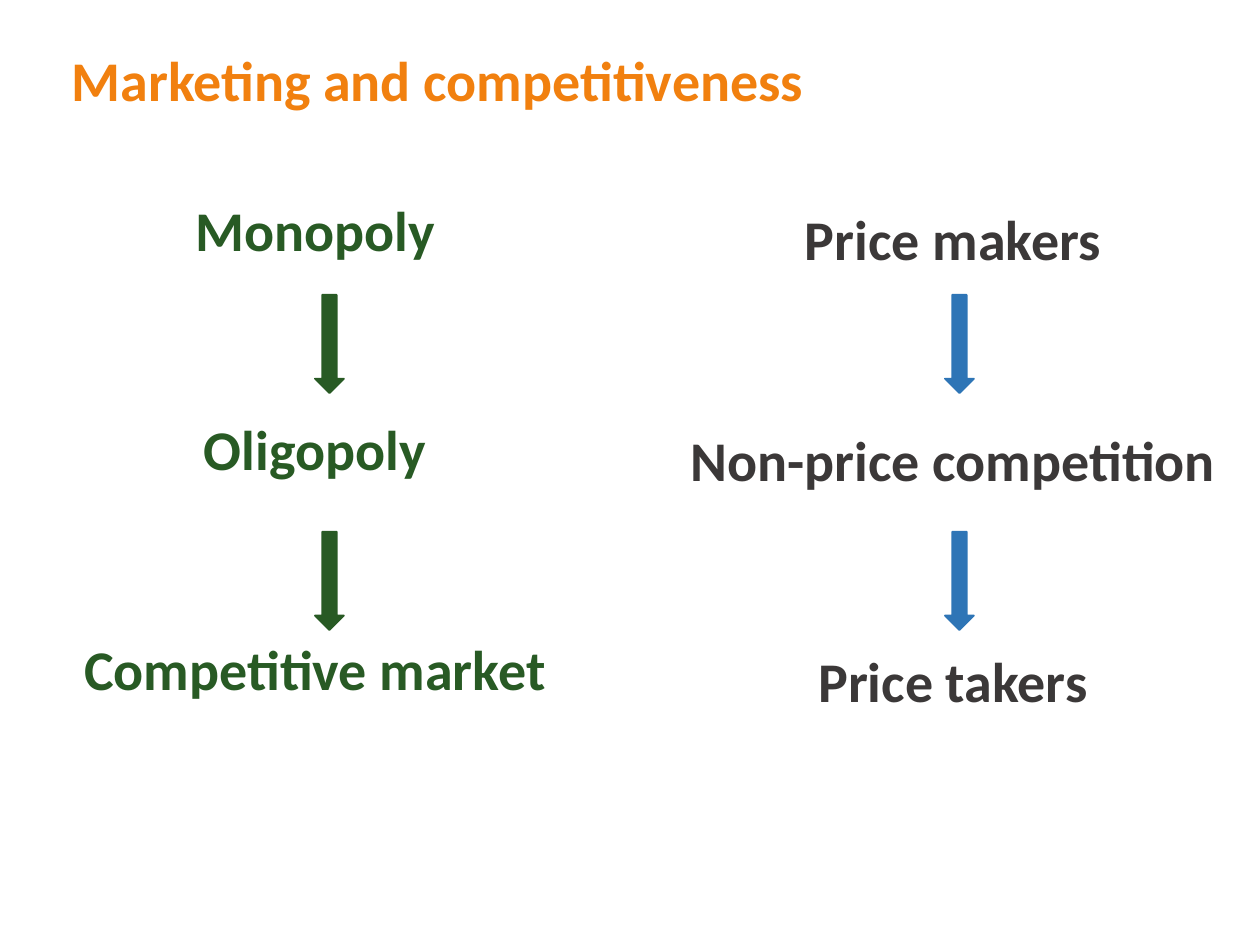
import pptx
import pptx.util
import pptx.dml.color
import pptx.enum.shapes
import pptx.enum.text

COLOURS = {
    "title": "F1800F",
    "market": "285A24",
    "pricing": "3B3838",
    "pricing_arrow": "2E75B6",
}


class SlideBuilder:
    font_name = "Calibri"
    font_size = pptx.util.Pt(32)
    unit = pptx.util.Inches(0.1)

    def __init__(self, slide):
        self.slide = slide

    def place(self, *cells):
        return [round(cell * self.unit) for cell in cells]

    def colour(self, name):
        return pptx.dml.color.RGBColor.from_string(COLOURS[name])

    def text(self, lines, area, colour, align, anchor, line_spacing=1.0, gap=0):
        box = self.slide.shapes.add_textbox(*self.place(*area))
        frame = box.text_frame
        frame.word_wrap = True
        frame.vertical_anchor = anchor
        for index, line in enumerate(lines):
            para = frame.add_paragraph() if index else frame.paragraphs[0]
            para.text = line
            para.alignment = align
            para.line_spacing = line_spacing
            para.space_before = pptx.util.Pt(gap if index else 0)
            para.font.name = self.font_name
            para.font.size = self.font_size
            para.font.bold = True
            para.font.color.rgb = self.colour(colour)

    def title(self, wording, area):
        self.text([wording], area, "title", pptx.enum.text.PP_ALIGN.LEFT,
                  pptx.enum.text.MSO_ANCHOR.MIDDLE, 0.9)

    def stages(self, lines, area, colour, line_spacing, gap):
        self.text(lines, area, colour, pptx.enum.text.PP_ALIGN.CENTER,
                  pptx.enum.text.MSO_ANCHOR.TOP, line_spacing, gap)

    def down_arrow(self, column, row, colour):
        arrow = self.slide.shapes.add_shape(
            pptx.enum.shapes.MSO_SHAPE.DOWN_ARROW,
            *self.place(column, row, 2.3, 7.8))
        arrow.shadow.inherit = False
        arrow.fill.solid()
        arrow.fill.fore_color.rgb = self.colour(colour)
        arrow.line.color.rgb = self.colour(colour)
        arrow.line.width = pptx.util.Pt(1)


def main():
    deck = pptx.Presentation()
    deck.slide_width = pptx.util.Inches(10)
    deck.slide_height = pptx.util.Inches(7.5)
    builder = SlideBuilder(deck.slides.add_slide(deck.slide_layouts[6]))

    builder.title("Marketing and competitiveness", (4.7, 2.3, 90, 8.6))
    builder.stages(["Monopoly", "Oligopoly", "Competitive market"],
                   (3.9, 15.6, 42.2, 43.8), "market", 0.9, 91)
    builder.stages(["Price makers", "Non-price competition", "Price takers"],
                   (52.8, 15.7, 45.7, 43.8), "pricing", 1.0, 88)
    for column, colour in ((25, "market"), (75, "pricing_arrow")):
        for row in (23.4, 42.2):
            builder.down_arrow(column, row, colour)

    deck.save("out.pptx")


if __name__ == "__main__":
    main()
